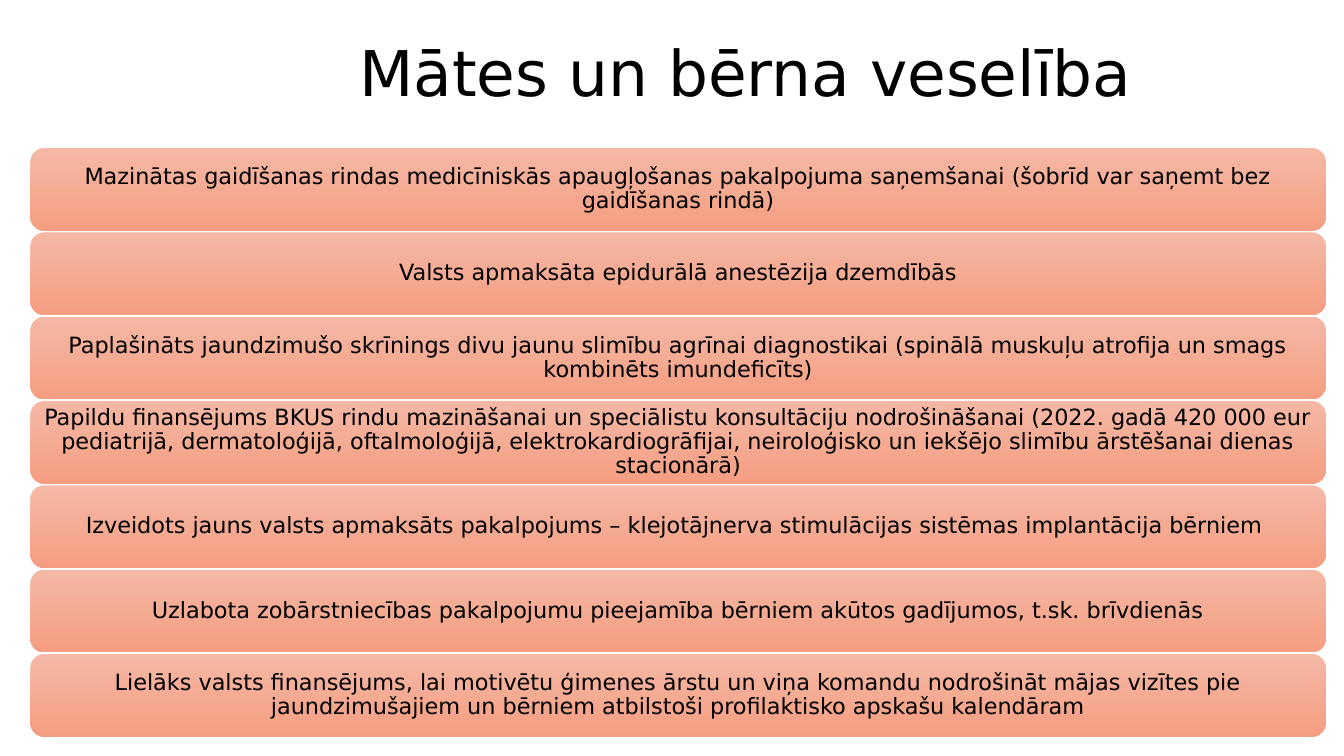
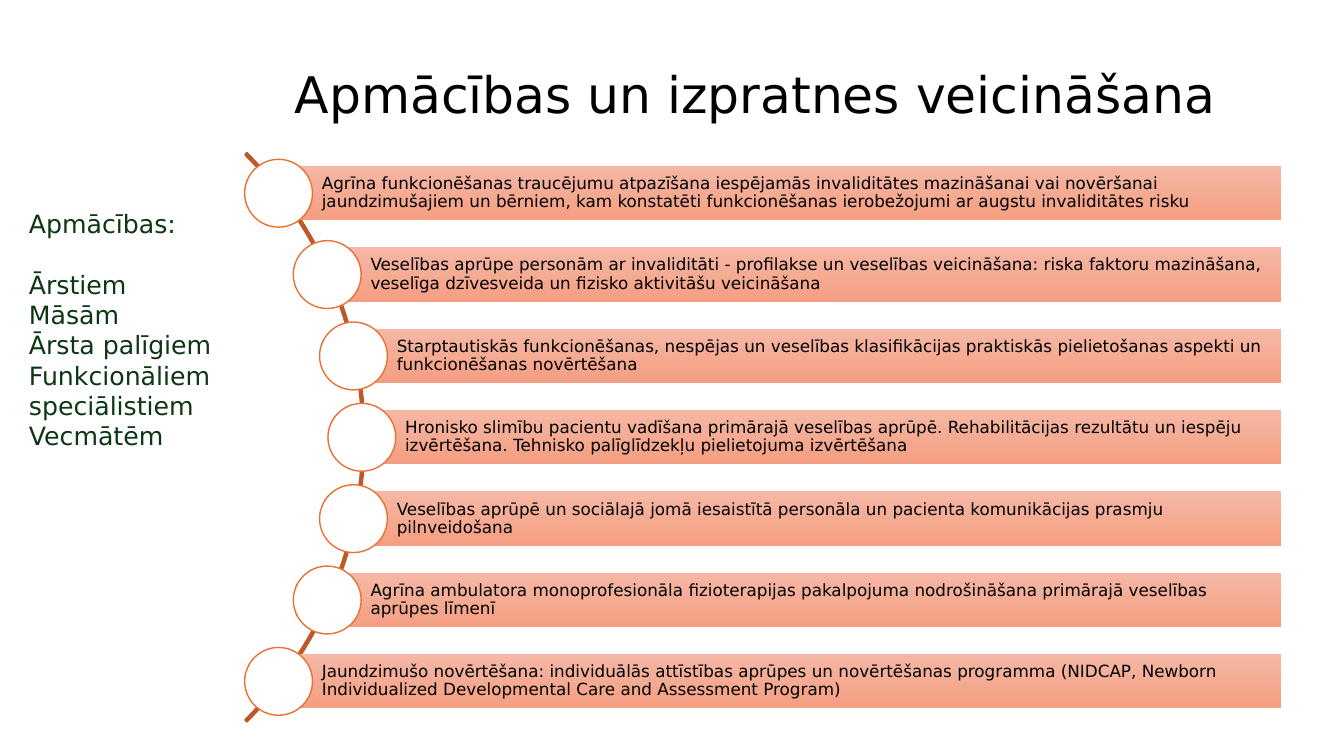
from math import sqrt

from pptx import Presentation
from pptx.dml.color import RGBColor
from pptx.enum.shapes import MSO_SHAPE
from pptx.enum.text import MSO_ANCHOR, PP_ALIGN
from pptx.util import Cm, Pt

BLACK = RGBColor(0x00, 0x00, 0x00)
WHITE = RGBColor(0xFF, 0xFF, 0xFF)
GREEN = RGBColor(0x0D, 0x36, 0x12)
ORANGE = RGBColor(0xE9, 0x71, 0x32)
RUST = RGBColor(0xBB, 0x5A, 0x28)
PEACH = RGBColor(0xF5, 0xB8, 0xA5)
SALMON = RGBColor(0xF5, 0x9E, 0x82)
FONT = "DejaVu Sans"

ACHIEVEMENTS = [
    "Mazinātas gaidīšanas rindas medicīniskās apaugļošanas pakalpojuma saņemšanai "
    "(šobrīd var saņemt bez gaidīšanas rindā)",
    "Valsts apmaksāta epidurālā anestēzija dzemdībās",
    "Paplašināts jaundzimušo skrīnings divu jaunu slimību agrīnai diagnostikai "
    "(spinālā muskuļu atrofija un smags kombinēts imundeficīts)",
    "Papildu finansējums BKUS rindu mazināšanai un speciālistu konsultāciju nodrošināšanai "
    "(2022. gadā 420 000 eur pediatrijā, dermatoloģijā, oftalmoloģijā, elektrokardiogrāfijai, "
    "neiroloģisko un iekšējo slimību ārstēšanai dienas stacionārā)",
    "Izveidots jauns valsts apmaksāts pakalpojums – klejotājnerva stimulācijas sistēmas "
    "implantācija bērniem ",
    "Uzlabota zobārstniecības pakalpojumu pieejamība bērniem akūtos gadījumos, "
    "t.sk. brīvdienās",
    "Lielāks valsts finansējums, lai motivētu ģimenes ārstu un viņa komandu nodrošināt "
    "mājas vizītes pie jaundzimušajiem un bērniem atbilstoši profilaktisko apskašu kalendāram",
]

TOPICS = [
    "Agrīna funkcionēšanas traucējumu atpazīšana iespējamās invaliditātes mazināšanai vai "
    "novēršanai jaundzimušajiem un bērniem, kam konstatēti funkcionēšanas ierobežojumi "
    "ar augstu invaliditātes risku",
    "Veselības aprūpe personām ar invaliditāti - profilakse un veselības veicināšana: "
    "riska faktoru mazināšana, veselīga dzīvesveida un fizisko aktivitāšu veicināšana",
    "Starptautiskās funkcionēšanas, nespējas un veselības klasifikācijas praktiskās "
    "pielietošanas aspekti un funkcionēšanas novērtēšana",
    "Hronisko slimību pacientu vadīšana primārajā veselības aprūpē. Rehabilitācijas rezultātu "
    "un iespēju izvērtēšana. Tehnisko palīglīdzekļu pielietojuma izvērtēšana",
    "Veselības aprūpē un sociālajā jomā iesaistītā personāla un pacienta komunikācijas "
    "prasmju pilnveidošana",
    "Agrīna ambulatora monoprofesionāla fizioterapijas pakalpojuma nodrošināšana "
    "primārajā veselības aprūpes līmenī",
    "Jaundzimušo novērtēšana: individuālās attīstības aprūpes un novērtēšanas programma "
    "(NIDCAP, Newborn Individualized Developmental Care and Assessment Program)",
]

TRAINEES = ["Ārstiem", "Māsām", "Ārsta palīgiem Funkcionāliem speciālistiem", "Vecmātēm"]


def write(frame, lines, size, color=BLACK, align=PP_ALIGN.LEFT, anchor=MSO_ANCHOR.MIDDLE,
          spacing=None, margins=(0.25, 0.13, 0.25, 0.13)):
    """Fill a text frame with one paragraph per line; margins are left, top, right, bottom."""
    frame.word_wrap = True
    frame.vertical_anchor = anchor
    (frame.margin_left, frame.margin_top,
     frame.margin_right, frame.margin_bottom) = map(Cm, margins)
    for index, line in enumerate(lines):
        para = frame.paragraphs[0] if index == 0 else frame.add_paragraph()
        para.alignment = align
        if spacing:
            para.line_spacing = spacing
        span = para.add_run()
        span.text = line
        span.font.name = FONT
        span.font.size = Pt(size)
        span.font.color.rgb = color


class Deck:
    """The presentation, its shared style and the slide being drawn."""

    def __init__(self):
        self.deck = Presentation()
        self.deck.slide_width = Cm(33.87)
        self.deck.slide_height = Cm(19.05)
        self.page = None

    def new_page(self, title, top, size):
        self.page = self.deck.slides.add_slide(self.deck.slide_layouts[6])
        self.text([title], 5.92, top, 26.24, 3.18, size=size, align=PP_ALIGN.CENTER)

    def text(self, lines, left, top, width, height, **style):
        box = self.page.shapes.add_textbox(Cm(left), Cm(top), Cm(width), Cm(height))
        write(box.text_frame, lines, **style)
        return box

    def shape(self, kind, left, top, width, height, fill=None, line=None, weight=1):
        shape = self.page.shapes.add_shape(kind, Cm(left), Cm(top), Cm(width), Cm(height))
        shape.shadow.inherit = False
        if fill is not None:
            shape.fill.solid()
            shape.fill.fore_color.rgb = fill
        if line is None:
            shape.line.fill.background()
        else:
            shape.line.color.rgb = line
            shape.line.width = Pt(weight)
        return shape

    def bar(self, kind, text, left, top, width, height, **style):
        """Draw a bar shaded from peach down to salmon, with its text."""
        bar = self.shape(kind, left, top, width, height)
        bar.fill.gradient()
        bar.fill.gradient_angle = 270
        for stop, color in zip(bar.fill.gradient_stops, (PEACH, SALMON)):
            stop.color.rgb = color
        write(bar.text_frame, [text], spacing=0.9, **style)

    def circle(self, center_x, center_y, size):
        self.shape(MSO_SHAPE.OVAL, center_x - size / 2, center_y - size / 2, size, size,
                   fill=WHITE, line=ORANGE)

    def arc(self, center_x, center_y, radius):
        """Draw a thin arc over the right quarter of a circle."""
        arc = self.shape(MSO_SHAPE.BLOCK_ARC, center_x - radius, center_y - radius,
                         2 * radius, 2 * radius, fill=RUST, line=RUST, weight=1.5)
        for index, value in enumerate((189, 27, 0.003)):
            arc.adjustments[index] = value

    def save(self):
        self.deck.save("out.pptx")


def achievements_page(deck):
    deck.new_page("Mātes un bērna veselība ", top=0.2, size=45)
    first_top, last_top = 3.73, 16.48
    pitch = (last_top - first_top) / (len(ACHIEVEMENTS) - 1)
    for row, text in enumerate(ACHIEVEMENTS):
        deck.bar(MSO_SHAPE.ROUNDED_RECTANGLE, text, 0.77, first_top + row * pitch, 32.64, 2.08,
                 size=16, align=PP_ALIGN.CENTER, margins=(0.18,) * 4)


def training_page(deck):
    deck.new_page("Apmācības un izpratnes veicināšana", top=0.76, size=36)
    center_x, center_y, orbit = -0.94, 11.02, 10.06
    pitch, bar_height, bar_right = 2.05, 1.37, 32.28
    deck.arc(center_x, center_y, radius=10.13)
    for row, text in enumerate(TOPICS):
        offset = (row - (len(TOPICS) - 1) / 2) * pitch
        left = center_x + sqrt(orbit ** 2 - offset ** 2)
        middle = center_y + offset
        deck.bar(MSO_SHAPE.RECTANGLE, text, left, middle - bar_height / 2,
                 bar_right - left, bar_height, size=12, margins=(1.09, 0.08, 0.08, 0.08))
        deck.circle(left, middle, 1.71)
    box = deck.text(["Apmācības:"] + TRAINEES, 0.48, 5.13, 5.44, 6.4,
                    size=18, color=GREEN, anchor=MSO_ANCHOR.TOP)
    box.text_frame.paragraphs[0].space_after = Pt(21.6)


def main():
    deck = Deck()
    achievements_page(deck)
    training_page(deck)
    deck.save()


if __name__ == "__main__":
    main()
